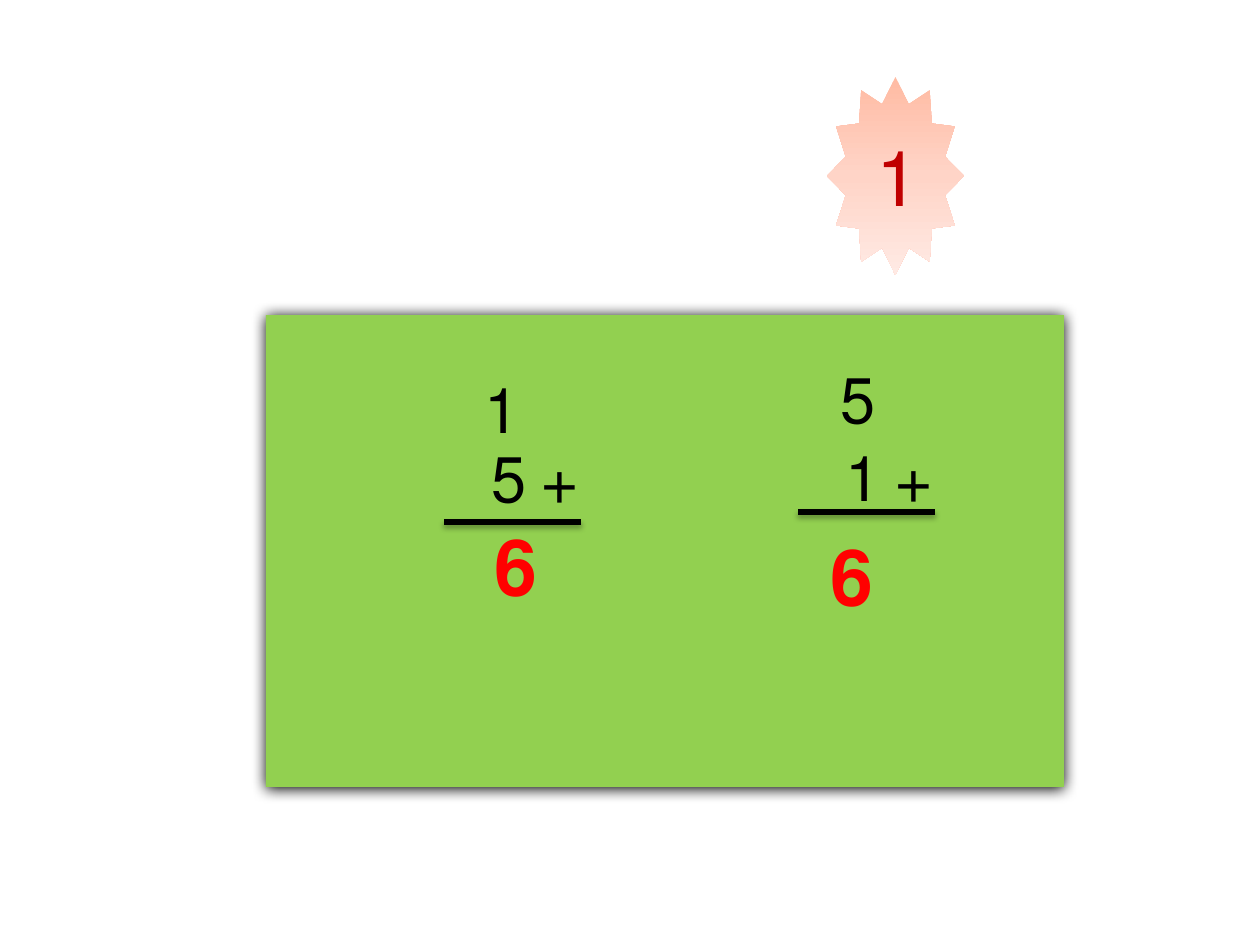
import copy

import pptx
import pptx.dml.color
import pptx.enum.shapes
import pptx.enum.text
import pptx.oxml
import pptx.oxml.ns
import pptx.util

RGB = pptx.dml.color.RGBColor
SHAPES = pptx.enum.shapes.MSO_SHAPE
ALIGN = pptx.enum.text.PP_ALIGN
PX = 914400 / 126

BLACK = RGB(0x00, 0x00, 0x00)
RED = RGB(0xFF, 0x00, 0x00)
DARK_RED = RGB(0xC0, 0x00, 0x00)
GREEN = RGB(0x92, 0xD0, 0x50)
PEACH_STOPS = (
    (0, RGB(0xFF, 0xBB, 0xA3)),
    (0.5, RGB(0xFF, 0xD4, 0xC7)),
    (1, RGB(0xFF, 0xEA, 0xE4)),
)

BADGE = {"size": pptx.util.Pt(44), "name": "Calibri", "bold": False}
ADDEND = {"size": pptx.util.Pt(36), "name": "Calibri", "bold": False}
SUM = {"size": pptx.util.Pt(44), "name": "Calibri", "bold": True}


def write_rtl(shape, text, align, style, color):
    """Put one right-to-left paragraph into the shape."""
    frame = shape.text_frame
    frame.word_wrap = True
    frame.auto_size = pptx.enum.text.MSO_AUTO_SIZE.SHAPE_TO_FIT_TEXT
    paragraph = frame.paragraphs[0]
    paragraph.alignment = align
    paragraph._p.get_or_add_pPr().set("rtl", "1")
    run = paragraph.add_run()
    run.text = text
    for attribute, value in style.items():
        setattr(run.font, attribute, value)
    run.font.color.rgb = color


def cast_shadow(shape, opacity, blur, distance):
    """Add a black downward shadow; opacity in percent, lengths in points."""
    shape._element.spPr.append(pptx.oxml.parse_xml(
        f'<a:effectLst {pptx.oxml.ns.nsdecls("a")}>'
        f'<a:outerShdw blurRad="{pptx.util.Pt(blur)}" dist="{pptx.util.Pt(distance)}" '
        'dir="5400000" rotWithShape="0"><a:srgbClr val="000000">'
        f'<a:alpha val="{opacity * 1000}"/></a:srgbClr></a:outerShdw></a:effectLst>'))


deck = pptx.Presentation()
deck.slide_width = pptx.util.Inches(10)
deck.slide_height = pptx.util.Inches(7.5)
slide = deck.slides.add_slide(deck.slide_layouts[6])
shapes = slide.shapes

# Numbered star
star = shapes.add_shape(
    SHAPES.STAR_12_POINT, *(round(v * PX) for v in (827, 77, 137, 198)))
star.shadow.inherit = False
star.line.fill.background()
star.fill.gradient()
star.fill.gradient_angle = 270
stop_list = star._element.spPr.find(".//" + pptx.oxml.ns.qn("a:gsLst"))
stop_list.insert(1, copy.deepcopy(stop_list[0]))
for stop, (position, color) in zip(star.fill.gradient_stops, PEACH_STOPS):
    stop.position = position
    stop.color.rgb = color
write_rtl(star, "1", ALIGN.RIGHT, BADGE, DARK_RED)

# Green board
board = shapes.add_shape(
    SHAPES.RECTANGLE, *(round(v * PX) for v in (266, 315, 798, 472)))
board.fill.solid()
board.fill.fore_color.rgb = GREEN
board.line.fill.background()
cast_shadow(board, 100, 8.5, 1)

# Column additions: texts with their boxes, then the rule as right, left, y
additions = (
    (("5", (759, 354)), ("+ 1", (816, 432)), ("6", (759, 522)), (935, 798, 512)),
    (("1", (403, 364)), ("+ 5", (462, 433)), ("6", (423, 512)), (581, 444, 522)),
)
for first, second, total, (right, left, y) in additions:
    for (text, (x, top)), (width, height), align, style, color in (
        (first, (129, 89), ALIGN.RIGHT, ADDEND, BLACK),
        (second, (129, 89), ALIGN.RIGHT, ADDEND, BLACK),
        (total, (186, 106), ALIGN.CENTER, SUM, RED),
    ):
        box = shapes.add_textbox(*(round(v * PX) for v in (x, top, width, height)))
        write_rtl(box, text, align, style, color)
    rule = shapes.add_connector(
        pptx.enum.shapes.MSO_CONNECTOR.STRAIGHT,
        *(round(v * PX) for v in (right, y, left, y)))
    rule.line.color.rgb = BLACK
    rule.line.width = pptx.util.Pt(3)
    cast_shadow(rule, 35, 3.1, 1.8)

deck.save("out.pptx")
